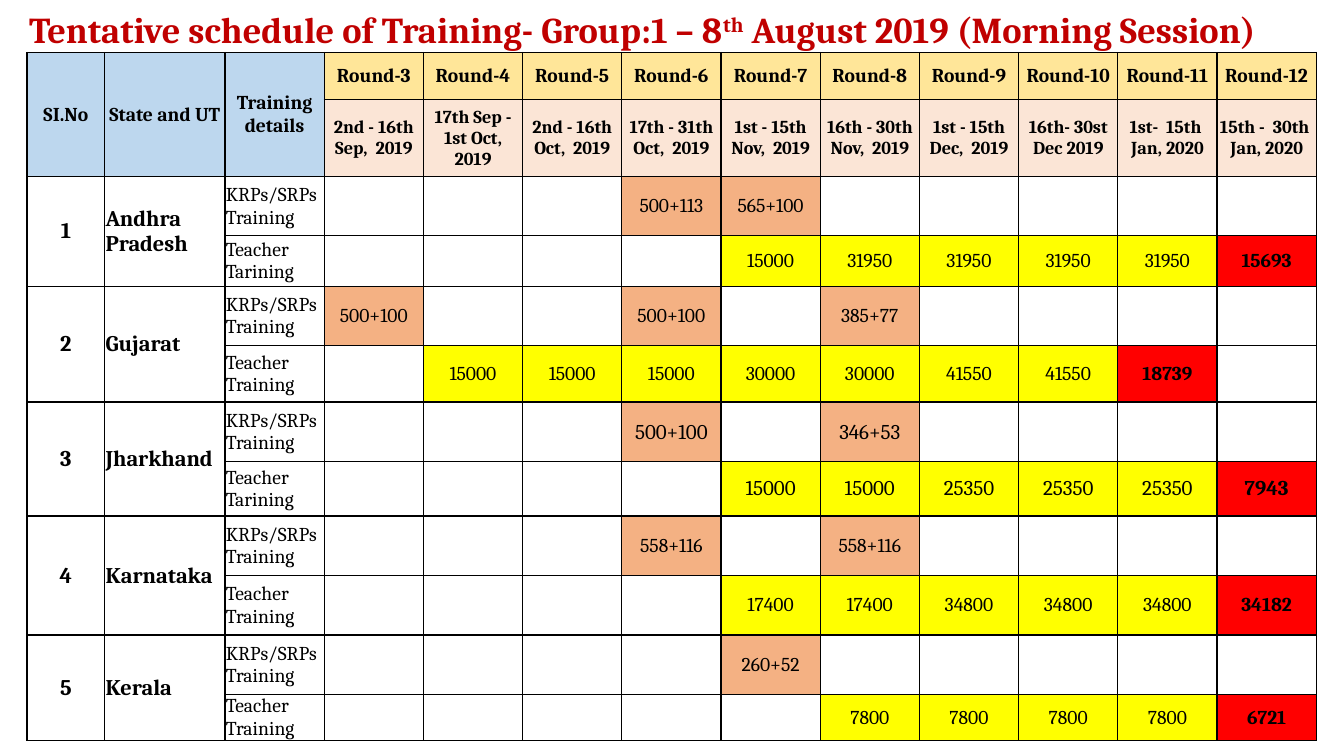
from dataclasses import dataclass

from lxml import etree
from pptx import Presentation
from pptx import util as u
from pptx.dml.color import RGBColor
from pptx.enum import text
from pptx.oxml import ns

FONT = "Cambria"
BLACK = RGBColor(0x00, 0x00, 0x00)
TITLE_RED = RGBColor(0xC0, 0x00, 0x00)
HEAD_BLUE = RGBColor(0xBD, 0xD7, 0xEE)
ROUND_GOLD = RGBColor(0xFF, 0xE6, 0x99)
DATE_PEACH = RGBColor(0xFB, 0xE5, 0xD6)
KRP_ORANGE = RGBColor(0xF4, 0xB1, 0x83)
TEACHER_YELLOW = RGBColor(0xFF, 0xFF, 0x00)
LAST_RED = RGBColor(0xFF, 0x00, 0x00)

FIRST_ROUND = 3
LABEL_COLUMNS = 3
COLUMN_WIDTHS = [1.96, 3.03] + [2.5] * 11
ROW_HEIGHTS = [1.19, 1.93, 1.5, 1.27, 1.5, 1.42, 1.5, 1.37, 1.5, 1.5, 1.5, 1.1]
HEADINGS = ["SI.No", "State and UT", "Training details"]
DATES = [
    "2nd - 16th Sep,  2019", "17th Sep - 1st Oct, 2019", "2nd - 16th Oct,  2019",
    "17th - 31th Oct,  2019", "1st - 15th Nov,  2019", "16th - 30th Nov,  2019",
    "1st - 15th Dec,  2019", "16th- 30st Dec 2019", "1st-  15th  Jan, 2020",
    "15th -  30th  Jan, 2020",
]


@dataclass
class State:
    name: str
    krps: dict[int, str]  # round -> participants
    teacher_start: int  # first round of teacher training
    teachers: list[int]  # one number a round, the last one closes the training
    teacher_label: str = "Teacher Training"
    size: float = 14


STATES = [
    State("Andhra Pradesh", {6: "500+113", 7: "565+100"}, 7,
          [15000, 31950, 31950, 31950, 31950, 15693], "Teacher Tarining"),
    State("Gujarat", {3: "500+100", 6: "500+100", 8: "385+77"}, 4,
          [15000, 15000, 15000, 30000, 30000, 41550, 41550, 18739]),
    State("Jharkhand", {6: "500+100", 8: "346+53"}, 7,
          [15000, 15000, 25350, 25350, 25350, 7943], "Teacher Tarining", 15),
    State("Karnataka", {6: "558+116", 8: "558+116"}, 7,
          [17400, 17400, 34800, 34800, 34800, 34182]),
    State("Kerala", {7: "260+52"}, 8, [7800, 7800, 7800, 7800, 6721]),
]


def add_span(para, words: str, *, size: float, bold: bool = False,
             color: RGBColor = BLACK, raised: bool = False) -> None:
    span = para.add_run()
    span.text = words
    font = span.font
    font.name, font.size, font.bold = FONT, u.Pt(size), bold
    font.color.rgb = color
    if raised:
        span._r.get_or_add_rPr().set("baseline", "30000")


def fill_cell(cell, words: str, *, size: float = 14, bold: bool = False,
              fill: RGBColor | None = None, centered: bool = True) -> None:
    if fill is not None:
        cell.fill.solid()
        cell.fill.fore_color.rgb = fill
    para = cell.text_frame.paragraphs[0]
    para.alignment = text.PP_ALIGN.CENTER if centered else text.PP_ALIGN.LEFT
    add_span(para, words, size=size, bold=bold)


def prepare_cell(cell) -> None:
    """Clear the fill, tighten the margins and draw thin black borders."""
    cell.fill.background()
    cell.vertical_anchor = text.MSO_ANCHOR.MIDDLE
    cell.margin_left = cell.margin_right = cell.margin_top = u.Cm(0.02)
    cell.margin_bottom = 0
    properties = cell._tc.get_or_add_tcPr()
    for position, side in enumerate(("lnL", "lnR", "lnT", "lnB")):
        line = etree.Element(ns.qn(f"a:{side}"), w=str(u.Pt(1)))
        solid = etree.SubElement(line, ns.qn("a:solidFill"))
        etree.SubElement(solid, ns.qn("a:srgbClr"), val=str(BLACK))
        properties.insert(position, line)


def add_title(page) -> None:
    box = page.shapes.title
    box.left, box.top = u.Cm(0.48), u.Cm(0.18)
    box.width, box.height = u.Cm(33.81), u.Cm(1.22)
    frame = box.text_frame
    frame.word_wrap = True
    frame.auto_size = text.MSO_AUTO_SIZE.NONE
    frame.vertical_anchor = text.MSO_ANCHOR.MIDDLE
    para = frame.paragraphs[0]
    para.alignment = text.PP_ALIGN.LEFT
    para.line_spacing = 0.9
    for words, raised in (("Tentative schedule of Training- Group:1 – 8", False),
                          ("th", True), (" August 2019 (Morning Session)", False)):
        add_span(para, words, size=26, bold=True, color=TITLE_RED, raised=raised)


def add_grid(page):
    frame = page.shapes.add_table(
        len(ROW_HEIGHTS), len(COLUMN_WIDTHS), u.Cm(0.68), u.Cm(1.32),
        u.Cm(sum(COLUMN_WIDTHS)), u.Cm(sum(ROW_HEIGHTS)))
    table = frame.table
    table.first_row = table.horz_banding = False
    for column, width in zip(table.columns, COLUMN_WIDTHS):
        column.width = u.Cm(width)
    for row, height in zip(table.rows, ROW_HEIGHTS):
        row.height = u.Cm(height)
    for cell in table.iter_cells():
        prepare_cell(cell)
    return table


def round_column(number: int) -> int:
    return LABEL_COLUMNS + number - FIRST_ROUND


def fill_header(table) -> None:
    for column, heading in enumerate(HEADINGS):
        table.cell(0, column).merge(table.cell(1, column))
        fill_cell(table.cell(0, column), heading, bold=True, fill=HEAD_BLUE)
    for number, dates in enumerate(DATES, FIRST_ROUND):
        column = round_column(number)
        fill_cell(table.cell(0, column), f"Round-{number}", bold=True, fill=ROUND_GOLD)
        fill_cell(table.cell(1, column), dates, size=13, bold=True, fill=DATE_PEACH)


def fill_state(table, number: int, state: State) -> None:
    krp_row = 2 * number
    teacher_row = krp_row + 1
    for column, words in enumerate((str(number), state.name)):
        table.cell(krp_row, column).merge(table.cell(teacher_row, column))
        fill_cell(table.cell(krp_row, column), words, size=16, bold=True,
                  centered=column == 0)
    fill_cell(table.cell(krp_row, 2), "KRPs/SRPs Training", centered=False)
    fill_cell(table.cell(teacher_row, 2), state.teacher_label, centered=False)
    for round_number, people in state.krps.items():
        fill_cell(table.cell(krp_row, round_column(round_number)), people,
                  size=state.size, fill=KRP_ORANGE)
    last_round = state.teacher_start + len(state.teachers) - 1
    for round_number, people in enumerate(state.teachers, state.teacher_start):
        is_last = round_number == last_round
        fill_cell(table.cell(teacher_row, round_column(round_number)), str(people),
                  size=state.size, bold=is_last,
                  fill=LAST_RED if is_last else TEACHER_YELLOW)


def main() -> None:
    deck = Presentation()
    deck.slide_width, deck.slide_height = u.Cm(33.87), u.Cm(19.05)
    page = deck.slides.add_slide(deck.slide_layouts[5])

    # Title
    add_title(page)

    # Schedule table
    table = add_grid(page)
    fill_header(table)
    for number, state in enumerate(STATES, 1):
        fill_state(table, number, state)

    deck.save("out.pptx")


if __name__ == "__main__":
    main()
